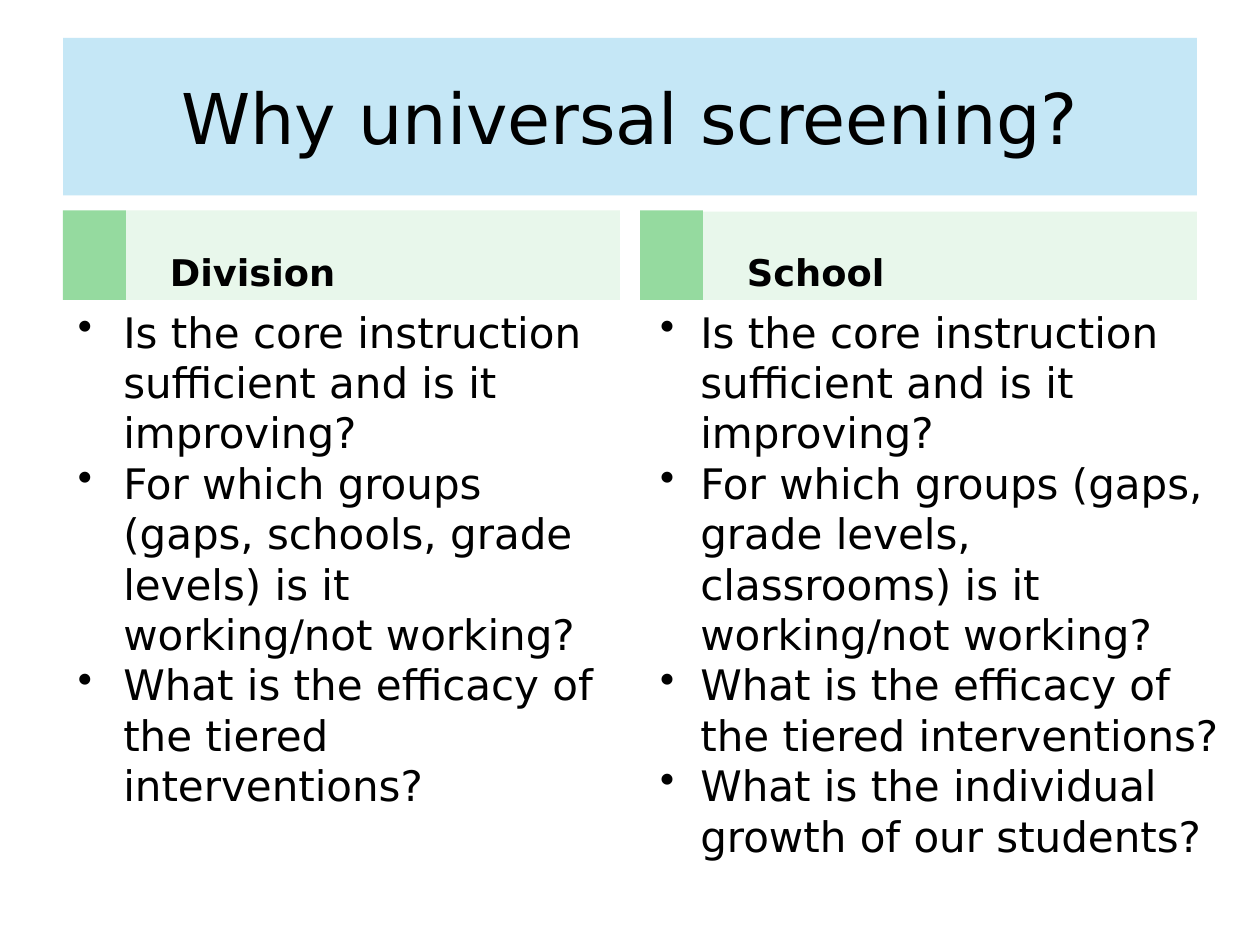
from lxml import etree
from pptx import Presentation
from pptx.dml.color import RGBColor
from pptx.enum.shapes import MSO_SHAPE
from pptx.enum.text import MSO_ANCHOR, PP_ALIGN
from pptx.oxml.ns import qn
from pptx.util import Pt

PX = 9144  # 100 px to the inch
FONT = "DejaVu Sans"
RECT = MSO_SHAPE.RECTANGLE
MIDDLE, BOTTOM = MSO_ANCHOR.MIDDLE, MSO_ANCHOR.BOTTOM
LEFT, CENTER = PP_ALIGN.LEFT, PP_ALIGN.CENTER

CORE = "Is the core instruction sufficient and is it improving?"
TIERS = "What is the efficacy of the tiered interventions?"
# head, left, head top, list width, list height, hanging indent, points
COLUMNS = [
    ("Division", 50, 167, 442, 432, 36, [
        CORE,
        "For which groups (gaps, schools, grade levels) is it working/not working?",
        TIERS,
    ]),
    ("School", 508, 168, 479, 502, 32, [
        CORE,
        "For which groups (gaps, grade levels, classrooms) is it working/not working?",
        TIERS,
        "What is the individual growth of our students?",
    ]),
]


def paint(shape, color):
    shape.fill.solid()
    shape.fill.fore_color.rgb = RGBColor.from_string(color)
    shape.line.fill.background()
    shape.shadow.inherit = False


def style(para, size, indent=0, hang=0, bold=False):
    """Set indents in px, then the font."""
    props = para._p.get_or_add_pPr()
    props.set("marL", str(indent * PX))
    props.set("indent", str(-hang * PX))
    para.font.name = FONT
    para.font.size = Pt(size)
    para.font.bold = bold
    para.font.color.rgb = RGBColor.from_string("000000")


prs = Presentation()
prs.slide_width, prs.slide_height = 1000 * PX, 750 * PX
slide = prs.slides.add_slide(prs.slide_layouts[5])
shapes = slide.shapes

title = shapes.title
title.left, title.top, title.width, title.height = (
    n * PX for n in (50, 30, 900, 125))
title.fill.solid()
title.fill.fore_color.rgb = RGBColor.from_string("A9DCF2")
tint = title.fill._xPr.find(qn("a:solidFill"))[0]
etree.SubElement(tint, qn("a:alpha")).set("val", "67000")
title.text_frame.text = "Why universal screening?"
title.text_frame.vertical_anchor = MIDDLE
para = title.text_frame.paragraphs[0]
para.alignment = CENTER
style(para, 40)

for name, left, top, width, height, hang, points in COLUMNS:
    block = shapes.add_shape(RECT, left * PX, 167 * PX, 50 * PX, 71 * PX)
    paint(block, "95DA9F")

    head = shapes.add_shape(
        RECT, (left + 50) * PX, top * PX, 392 * PX, (238 - top) * PX)
    paint(head, "E8F7EB")
    head.text_frame.text = name
    head.text_frame.vertical_anchor = BOTTOM
    para = head.text_frame.paragraphs[0]
    para.alignment = LEFT
    style(para, 21, 50, 25, bold=True)

    box = shapes.add_textbox(left * PX, 238 * PX, width * PX, height * PX)
    frame = box.text_frame
    frame.word_wrap = True
    frame.text = "\n".join(points)
    for para in frame.paragraphs:
        props = para._p.get_or_add_pPr()
        etree.SubElement(props, qn("a:buChar")).set("char", "•")
        style(para, 24, 38, hang)

prs.save("out.pptx")
